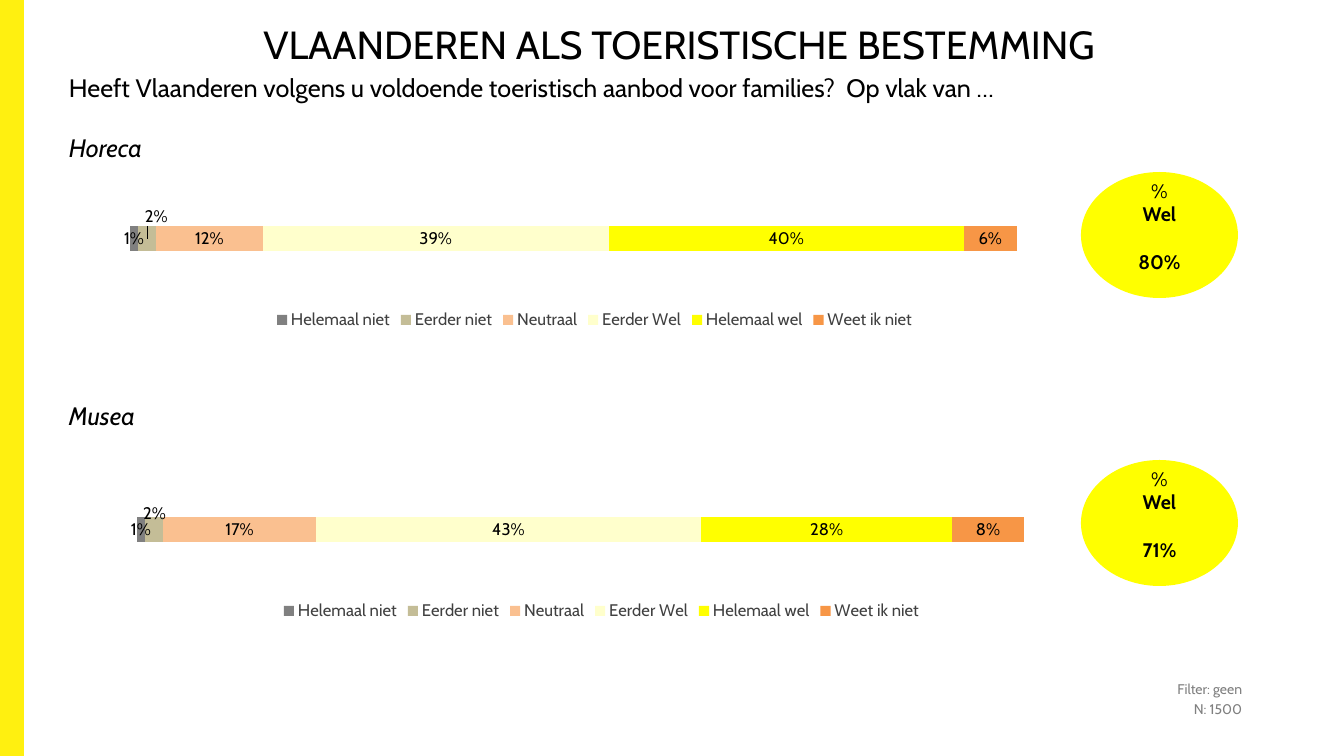
"""Build the slide on Flanders as a tourist destination, with two survey bars."""
from lxml import etree
from pptx import Presentation
from pptx import util as u
from pptx.chart import data
from pptx.dml.color import RGBColor
from pptx.enum import chart as ch, shapes, text
from pptx.oxml.ns import qn

COLORS = {
    "black": "000000", "grey": "808080", "legend": "404040",
    "band": "FFF010", "yellow": "FFFF00",
}
ANSWERS = {
    "Helemaal niet": "808080", "Eerder niet": "C4BD97", "Neutraal": "FAC090",
    "Eerder Wel": "FFFFCC", "Helemaal wel": "FFFF00", "Weet ik niet": "F79646",
}
PERCENT = "###0%"


def manual_layout(**values):
    layout = etree.Element(qn("c:layout"))
    manual = etree.SubElement(layout, qn("c:manualLayout"))
    for tag, val in values.items():
        etree.SubElement(manual, qn("c:" + tag)).set("val", str(val))
    return layout


class Deck:
    """Style and current slide, drawn in px."""

    FONT = "Cabin"
    SCALE = 914400 / 100.8

    def __init__(self):
        self.prs = Presentation()
        self.prs.slide_width, self.prs.slide_height = self.px(1344, 756)
        self.s = self.prs.slides.add_slide(self.prs.slide_layouts[6])

    def px(self, *lengths):
        return [u.Emu(round(n * self.SCALE)) for n in lengths]

    def style(self, font, size, color="black", bold=None, italic=None):
        font.name, font.size = self.FONT, u.Pt(size)
        font.bold, font.italic = bold, italic
        font.color.rgb = RGBColor.from_string(COLORS[color])

    def fill(self, tf, lines, align, gaps=(), bold=(), **style):
        tf.word_wrap = True
        for i, line in enumerate(lines):
            p = tf.paragraphs[0] if i == 0 else tf.add_paragraph()
            p.text, p.alignment = line, align
            if i and gaps:
                p.space_before = u.Pt(gaps[i])
            self.style(p.font, bold=i in bold, **style)

    def label(self, box, lines, align=text.PP_ALIGN.LEFT, middle=False, **style):
        tf = self.s.shapes.add_textbox(*self.px(*box)).text_frame
        if middle:
            tf.vertical_anchor = text.MSO_ANCHOR.MIDDLE
        self.fill(tf, lines, align, **style)

    def shape(self, kind, box, color):
        sp = self.s.shapes.add_shape(kind, *self.px(*box))
        sp.shadow.inherit = False
        sp.fill.solid()
        sp.fill.fore_color.rgb = RGBColor.from_string(COLORS[color])
        sp.line.fill.background()
        return sp

    def badge(self, box, share):
        sp = self.shape(shapes.MSO_SHAPE.FLOWCHART_CONNECTOR, box, "yellow")
        tf = sp.text_frame
        tf.vertical_anchor = text.MSO_ANCHOR.MIDDLE
        tf.margin_bottom = self.px(23)[0]
        self.fill(tf, ["%", "Wel", share], text.PP_ALIGN.CENTER,
                  gaps=(0, 0, 17), bold=(1, 2), size=14)

    def bar(self, box, values, nudge):
        cd = data.CategoryChartData(number_format=PERCENT)
        cd.categories = ["1"]
        for name, value in zip(ANSWERS, values):
            cd.add_series(name, [value])
        chart = self.s.shapes.add_chart(
            ch.XL_CHART_TYPE.BAR_STACKED_100, *self.px(*box), cd).chart
        self.style(chart.font, 10)
        chart.has_title = False
        chart.category_axis.visible = chart.value_axis.visible = False
        chart.value_axis.has_major_gridlines = False
        chart.value_axis.tick_labels.number_format = PERCENT
        chart.value_axis.tick_labels.number_format_is_linked = False
        self.legend(chart)
        plot = chart.plots[0]
        plot.gap_width, plot.overlap, plot.vary_by_categories = 150, 100, False
        for series, color in zip(plot.series, ANSWERS.values()):
            series.format.fill.solid()
            series.format.fill.fore_color.rgb = RGBColor.from_string(color)
            labels = series.data_labels
            labels.show_value = True
            labels.number_format, labels.number_format_is_linked = PERCENT, False
            labels.position = ch.XL_LABEL_POSITION.CENTER
            self.style(labels.font, 12)
        self.move_label(plot.series[1], nudge)
        area = chart._chartSpace.chart.plotArea
        for old in area.findall(qn("c:layout")):
            area.remove(old)
        area.insert(0, manual_layout(
            layoutTarget="inner", xMode="edge", yMode="edge",
            x=0, y=0.06, w=1, h=0.39))

    def legend(self, chart):
        chart.has_legend = True
        legend = chart.legend
        legend.position = ch.XL_LEGEND_POSITION.BOTTOM
        legend.include_in_layout = False
        self.style(legend.font, 12, "legend")
        element = legend._element
        for old in element.findall(qn("c:layout")):
            element.remove(old)
        element.find(qn("c:legendPos")).addnext(manual_layout(
            xMode="edge", yMode="edge", x=0.16, y=0.69))

    def move_label(self, series, nudge):
        label = series.points[0].data_label
        label.position = ch.XL_LABEL_POSITION.CENTER
        self.style(label.font, 12)
        idx = series._element.find(".//" + qn("c:dLbl")).find(qn("c:idx"))
        fmt = etree.Element(qn("c:numFmt"), formatCode=PERCENT, sourceLinked="0")
        idx.addnext(fmt)
        idx.addnext(manual_layout(x=nudge[0], y=nudge[1]))


def main():
    deck = Deck()
    deck.shape(shapes.MSO_SHAPE.RECTANGLE, (0, 0, 24, 756), "band")
    deck.label((19, -19, 1320, 126), ["VLAANDEREN ALS TOERISTISCHE BESTEMMING"],
               text.PP_ALIGN.CENTER, middle=True, size=28)
    deck.label((59, 67, 1266, 192), [
        "Heeft Vlaanderen volgens u voldoende toeristisch aanbod voor families?"
        "  Op vlak van …"], size=18)
    topics = [
        ("Horeca", 127, (124, 199), 172, "80%",
         (0.01, 0.02, 0.12, 0.39, 0.4, 0.06), (0.01, -0.14)),
        ("Musea", 395, (131, 490), 460, "71%",
         (0.01, 0.02, 0.17, 0.43, 0.28, 0.08), (0, -0.1)),
    ]
    for name, top, corner, badge_top, share, values, nudge in topics:
        deck.label((59, top, 1035, 192), [name], size=18, italic=True)
        deck.bar((*corner, 893, 155), values, nudge)
        deck.badge((1081, badge_top, 157, 126), share)
    deck.label((868, 676, 384, 53), ["Filter: geen", "N: 1500"],
               text.PP_ALIGN.RIGHT, gaps=(0, 2), size=10, color="grey")
    deck.prs.save("out.pptx")


if __name__ == "__main__":
    main()
